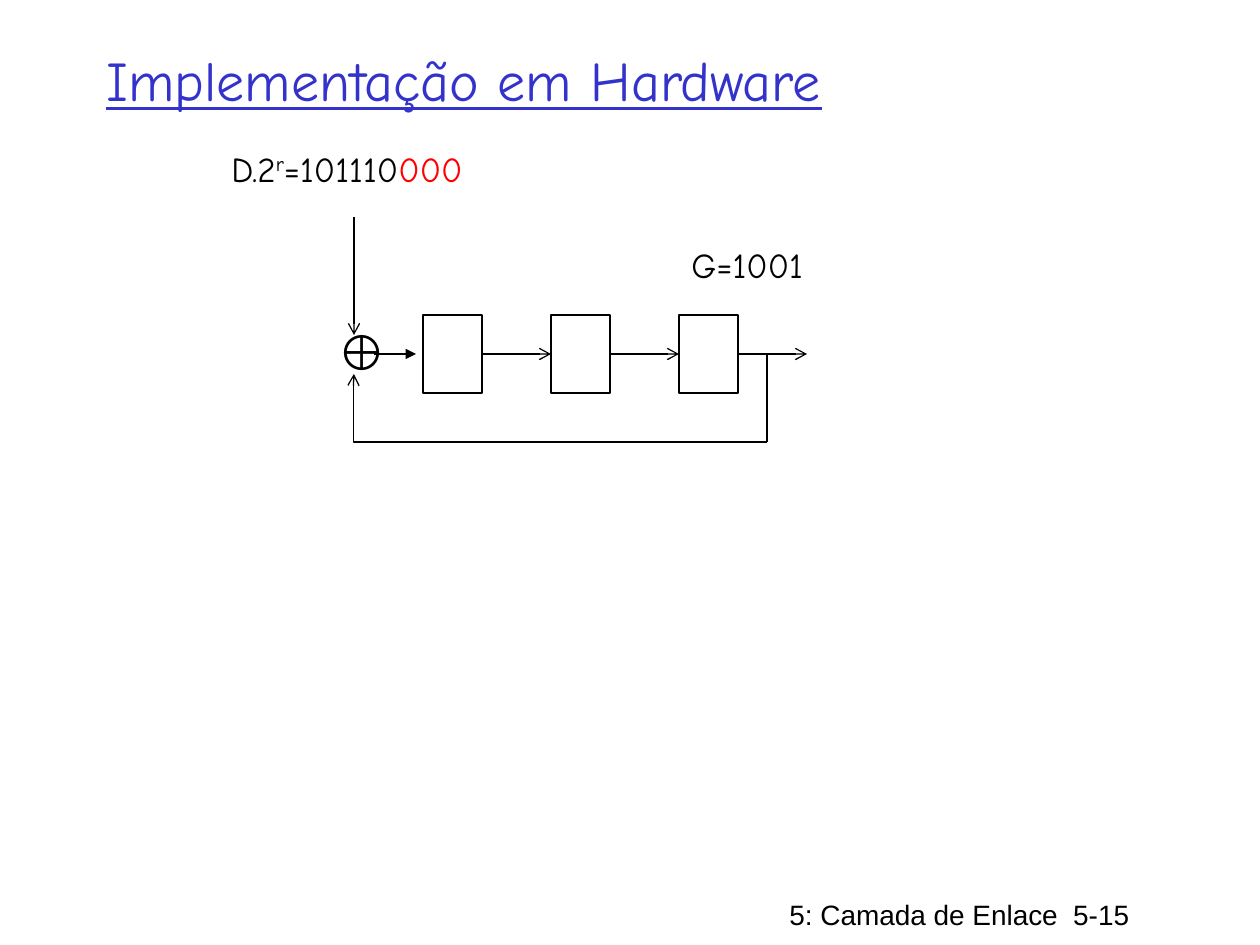
from lxml.etree import SubElement
from pptx import Presentation
from pptx.dml.color import RGBColor
from pptx.enum.shapes import MSO_CONNECTOR, MSO_SHAPE
from pptx.enum.text import MSO_ANCHOR, MSO_AUTO_SIZE
from pptx.oxml.ns import qn
from pptx.util import Emu, Pt

BLACK = RGBColor(0x00, 0x00, 0x00)
BLUE = RGBColor(0x33, 0x33, 0xCC)
RED = RGBColor(0xFF, 0x00, 0x00)
HAND = "Comic Neue"
SANS = "Arial"
PX_PER_INCH = 126


def px(length):
    return Emu(round(length * 914400 / PX_PER_INCH))


class Diagram:
    def __init__(self, page, line_width=0.75):
        self.page = page
        self.line_width = Pt(line_width)

    def text(self, left, top, width, height, spans, size, font=HAND, wrap=False,
             anchor=MSO_ANCHOR.TOP, grow=True):
        box = self.page.shapes.add_textbox(px(left), px(top), px(width), px(height))
        frame = box.text_frame
        frame.word_wrap = wrap
        frame.vertical_anchor = anchor
        frame.auto_size = MSO_AUTO_SIZE.SHAPE_TO_FIT_TEXT if grow else MSO_AUTO_SIZE.NONE
        for words, style in spans:
            span = frame.paragraphs[0].add_run()
            span.text = words
            style = {"size": Pt(size), "name": font, "color": BLACK, **style}
            span.font.color.rgb = style.pop("color")
            baseline = style.pop("baseline", None)
            for name, value in style.items():
                setattr(span.font, name, value)
            if baseline:
                span._r.get_or_add_rPr().set("baseline", str(baseline * 1000))
        return box

    def register(self, left, top, width, height):
        box = self.page.shapes.add_shape(
            MSO_SHAPE.RECTANGLE, px(left), px(top), px(width), px(height))
        box.shadow.inherit = False
        box.fill.background()
        self.outline(box)
        return box

    def outline(self, shape):
        shape.line.color.rgb = BLACK
        shape.line.width = self.line_width

    def wire(self, start, end, head=None, source=None, target=None, bend=None):
        kind = MSO_CONNECTOR.ELBOW if bend else MSO_CONNECTOR.STRAIGHT
        wire = self.page.shapes.add_connector(kind, *map(px, start + end))
        self.outline(wire)
        properties = wire._element.spPr
        SubElement(properties, qn("a:effectLst"))
        if head:
            SubElement(wire.line._get_or_add_ln(), qn("a:tailEnd"), type=head)
        if bend:
            guides = properties.find(qn("a:prstGeom")).get_or_add_avLst()
            SubElement(guides, qn("a:gd"), name="adj1", fmla=f"val {bend}")
        if source:
            wire.begin_connect(source, 3)
        if target:
            wire.end_connect(target, 1)
        return wire


def main():
    deck = Presentation()
    deck.slide_width, deck.slide_height = px(1260), px(945)
    page = deck.slides.add_slide(deck.slide_layouts[6])
    diagram = Diagram(page)

    diagram.text(777, 891, 483, 47, [("5: Camada de Enlace  5-15", {})], 16, SANS, wrap=True)
    diagram.text(94, 21, 1071, 116,
                 [("Implementação em Hardware", {"color": BLUE, "underline": True})],
                 32, wrap=True, anchor=MSO_ANCHOR.MIDDLE, grow=False)

    first, pitch, top, width, height = 423, 128, 315, 59, 78
    middle = top + height // 2
    lefts = [first + pitch * index for index in range(3)]
    registers = [diagram.register(left, top, width, height) for left in lefts]
    diagram.text(325, top, 63, 72, [("⊕", {})], 28, SANS)

    input_x, tap_x, feedback_y = 354, 767, 442
    diagram.wire((374, middle), (416, middle), "triangle")
    for left, source, target in zip(lefts, registers, registers[1:] + [None]):
        diagram.wire((left + width, middle), (left + pitch, middle), "arrow", source, target)
    diagram.wire((input_x, 217), (input_x, 335), "arrow")
    diagram.wire((tap_x, feedback_y), (input_x, 374), "arrow", bend=100100)
    diagram.wire((tap_x, feedback_y), (tap_x, middle))

    diagram.text(679, 237, 141, 55, [("G=1001", {})], 20)
    diagram.text(219, 141, 282, 55,
                 [("D.2", {}), ("r", {"baseline": 30}), ("=101110", {}), ("000", {"color": RED})],
                 20)
    deck.save("out.pptx")


if __name__ == "__main__":
    main()
